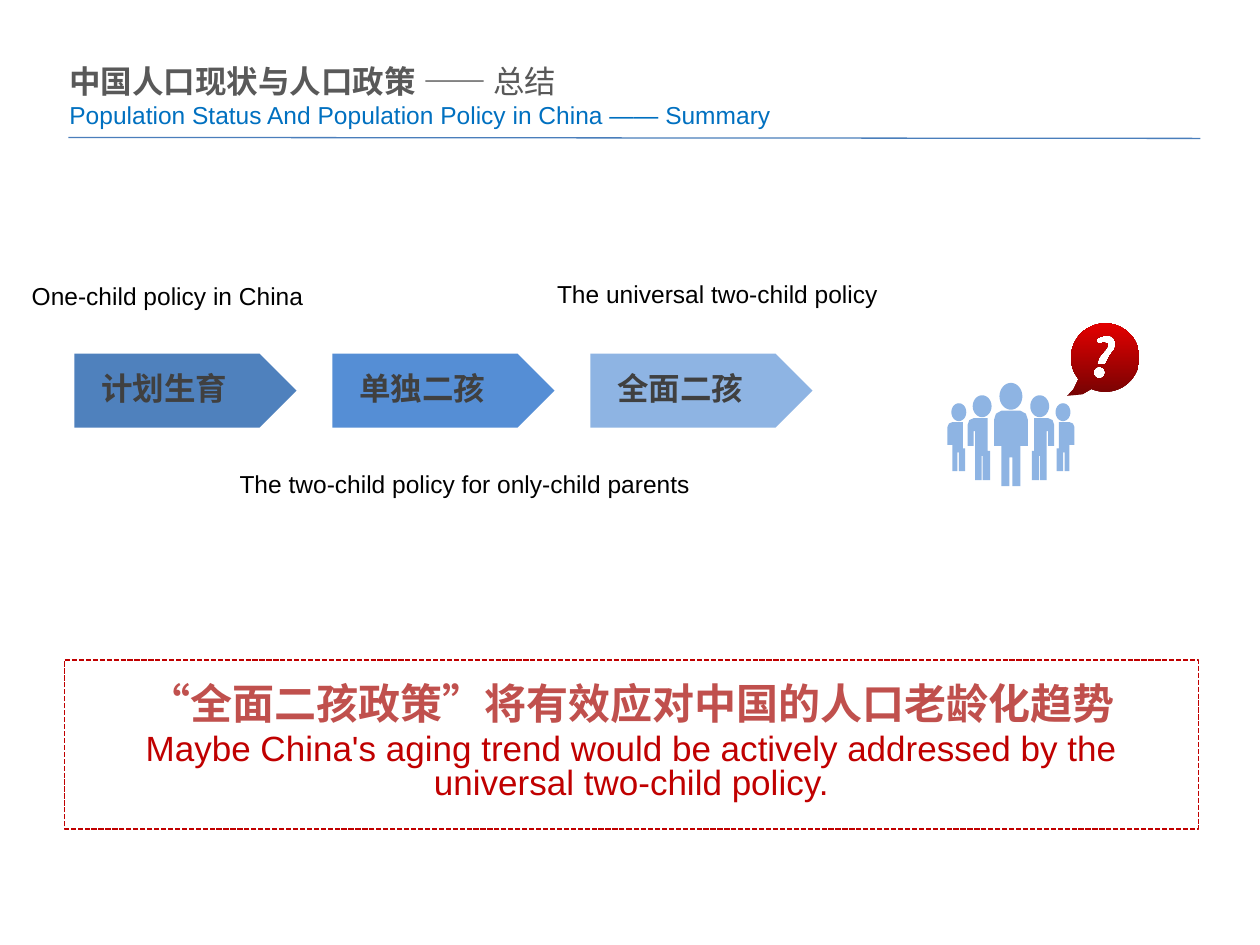
from math import cos, radians, sin

from lxml import etree
from pptx import Presentation
from pptx import util as u
from pptx.dml.color import RGBColor
from pptx.enum import dml, shapes, text
from pptx.oxml import ns

RULE_BLUE = RGBColor(0x4A, 0x7E, 0xBB)
TITLE_BLUE = RGBColor(0x00, 0x70, 0xC0)
DEEP_BLUE = RGBColor(0x4F, 0x81, 0xBD)
MID_BLUE = RGBColor(0x55, 0x8E, 0xD5)
PALE_BLUE = RGBColor(0x8E, 0xB4, 0xE3)
TITLE_GREY = RGBColor(0x59, 0x59, 0x59)
DARK_GREY = RGBColor(0x40, 0x40, 0x40)
BLACK = RGBColor(0x00, 0x00, 0x00)
SOFT_RED = RGBColor(0xC0, 0x50, 0x4D)
RED = RGBColor(0xC0, 0x00, 0x00)
BUBBLE_DARK = RGBColor(0x76, 0x03, 0x03)
BUBBLE_BRIGHT = RGBColor(0xE3, 0x00, 0x00)

LATIN = "Arial"
CHINESE = "Noto Sans CJK SC"


def ring(center_x, center_y, radius_x, radius_y, start=0, end=360):
    angles = [radians(start + (end - start) * step / 48) for step in range(49)]
    return [(center_x + radius_x * cos(a), center_y + radius_y * sin(a)) for a in angles]


def draw_outlines(page, outlines):
    builder = None
    for outline in outlines:
        points = [(u.Cm(x), u.Cm(y)) for x, y in outline]
        if builder is None:
            builder = page.shapes.build_freeform(*points[0], scale=1.0)
        else:
            builder.move_to(*points[0])
        builder.add_line_segments(points[1:], close=True)
    shape = builder.convert_to_shape()
    shape.shadow.inherit = False
    shape.line.fill.background()
    return shape


deck = Presentation()
deck.slide_width, deck.slide_height = u.Cm(25.4), u.Cm(19.05)
page = deck.slides.add_slide(deck.slide_layouts[6])

rule = page.shapes.add_connector(
    shapes.MSO_CONNECTOR.STRAIGHT, u.Cm(1.38), u.Cm(2.77), u.Cm(24.2), u.Cm(2.79))
rule.line.color.rgb = RULE_BLUE
rule.line.width = u.Pt(0.75)
etree.SubElement(rule._element.spPr, ns.qn("a:effectLst"))

title_format = {"size": u.Pt(18), "name": CHINESE, "bold": True}
label_format = {"size": u.Pt(14), "name": LATIN, "bold": False}
callout_format = {"size": u.Pt(20), "name": LATIN, "bold": False}
plain = {"word_wrap": True, "vertical_anchor": text.MSO_ANCHOR.TOP}
middle = {"word_wrap": True, "vertical_anchor": text.MSO_ANCHOR.MIDDLE}
unwrapped = {"word_wrap": False, "vertical_anchor": text.MSO_ANCHOR.TOP}
left = {"alignment": text.PP_ALIGN.LEFT}
centered = {"alignment": text.PP_ALIGN.CENTER, "line_spacing": 0.8}

texts = [
    ((1.3, 13.31, 22.86, 3.4), middle, centered, [
        [("“全面二孩政策”将有效应对中国的人口老龄化趋势",
          {**title_format, "size": u.Pt(24)}, SOFT_RED)],
        [("Maybe China's aging trend would be actively addressed by the "
          "universal two-child policy.", callout_format, RED)]]),
    ((1.27, 1.12, 19.43, 1.68), plain, left, [
        [("中国人口现状与人口政策 —— ", title_format, TITLE_GREY),
         ("总结", {**title_format, "bold": False}, TITLE_GREY)],
        [("Population Status And Population Policy in China —— Summary",
          label_format, TITLE_BLUE)]]),
    ((11.1, 5.51, 7.21, 0.81), middle, left,
     [[("The universal two-child policy", label_format, BLACK)]]),
    ((4.7, 9.35, 9.75, 0.81), middle, left,
     [[("The two-child policy for only-child parents", label_format, BLACK)]]),
    ((0.51, 5.56, 9.75, 0.81), middle, left,
     [[("One-child policy in China", label_format, BLACK)]]),
]

policies = [("计划生育", DEEP_BLUE), ("单独二孩", MID_BLUE), ("全面二孩", PALE_BLUE)]
for index, (policy, color) in enumerate(policies):
    x = 1.5 + 5.2 * index
    arrow = page.shapes.add_shape(
        shapes.MSO_SHAPE.PENTAGON, u.Cm(x), u.Cm(7.13), u.Cm(4.48), u.Cm(1.49))
    arrow.shadow.inherit = False
    arrow.fill.solid()
    arrow.fill.fore_color.rgb = color
    arrow.line.fill.background()
    texts.append(((x + 0.41, 7.31, 2.82, 1.14), unwrapped, left,
                  [[(policy, title_format, DARK_GREY)]]))

boxes = []
for place, frame_format, para_format, lines in texts:
    box = page.shapes.add_textbox(*[u.Cm(length) for length in place])
    boxes.append(box)
    frame = box.text_frame
    for side in ("left", "top", "right", "bottom"):
        setattr(frame, f"margin_{side}", u.Cm(0.13))
    for name, value in frame_format.items():
        setattr(frame, name, value)
    for number, runs in enumerate(lines):
        para = frame.add_paragraph() if number else frame.paragraphs[0]
        for name, value in para_format.items():
            setattr(para, name, value)
        for words, font_format, color in runs:
            span = para.add_run()
            span.text = words
            span.font.color.rgb = color
            for name, value in font_format.items():
                setattr(span.font, name, value)
            etree.SubElement(span._r.get_or_add_rPr(), ns.qn("a:ea"),
                             typeface=font_format["name"])

callout = boxes[0]
callout.text_frame.paragraphs[1].space_before = u.Pt(4)
callout.line.color.rgb = RED
callout.line.width = u.Pt(1)
callout.line.dash_style = dml.MSO_LINE.SQUARE_DOT

axis = 20.38
half_body = [(-0.19, 8.28), (-0.3, 8.34), (-0.34, 8.46), (-0.34, 8.99), (-0.19, 8.99),
             (-0.19, 9.8), (-0.03, 9.8), (-0.03, 9.22)]
center_body = half_body + [(-x, y) for x, y in reversed(half_body)]
inner_body = [(-0.75, 8.43), (-0.84, 8.47), (-0.87, 8.56), (-0.87, 8.99), (-0.75, 8.99),
              (-0.75, 8.69), (-0.72, 8.69), (-0.72, 9.68), (-0.59, 9.68), (-0.59, 9.19),
              (-0.57, 9.19), (-0.57, 9.68), (-0.42, 9.68), (-0.42, 9.09), (-0.47, 9.09),
              (-0.47, 8.43)]
outer_body = [(-1.18, 8.51), (-1.25, 8.54), (-1.28, 8.61), (-1.28, 8.97), (-1.18, 8.97),
              (-1.18, 9.5), (-1.08, 9.5), (-1.08, 9.12), (-1.05, 9.12), (-1.05, 9.5),
              (-0.92, 9.5), (-0.92, 9.04), (-0.97, 9.04), (-0.97, 8.51)]
side_people = [inner_body, ring(-0.58, 8.19, 0.19, 0.22),
               outer_body, ring(-1.05, 8.31, 0.15, 0.18)]
crowd_outlines = [ring(axis, 7.99, 0.23, 0.27), [(axis + x, y) for x, y in center_body]]
for side in (1, -1):
    for outline in side_people:
        crowd_outlines.append([(axis + side * x, y) for x, y in outline])
crowd = draw_outlines(page, crowd_outlines)
crowd.fill.solid()
crowd.fill.fore_color.rgb = PALE_BLUE

balloon = ring(22.28, 7.21, 0.69, 0.69, 141, 474) + [
    (21.82, 7.95), (21.51, 7.98), (21.64, 7.85)]
question_dot = ring(22.16, 7.51, 0.12, 0.12)
question_hook = [(22.3, 6.76), (22.19, 6.78), (22.1, 6.83), (22.12, 6.93), (22.25, 6.91),
                 (22.32, 6.92), (22.33, 6.96), (22.31, 7.02), (22.23, 7.11), (22.15, 7.21),
                 (22.12, 7.32), (22.1, 7.34), (22.28, 7.34), (22.3, 7.32), (22.38, 7.16),
                 (22.47, 7.04), (22.5, 6.93), (22.46, 6.82), (22.39, 6.77)]
bubble = draw_outlines(page, [balloon, question_dot, question_hook])
bubble.fill.gradient()
bubble.fill.gradient_angle = 90
for stop, color in zip(bubble.fill.gradient_stops, (BUBBLE_DARK, BUBBLE_BRIGHT)):
    stop.color.rgb = color

deck.save("out.pptx")
